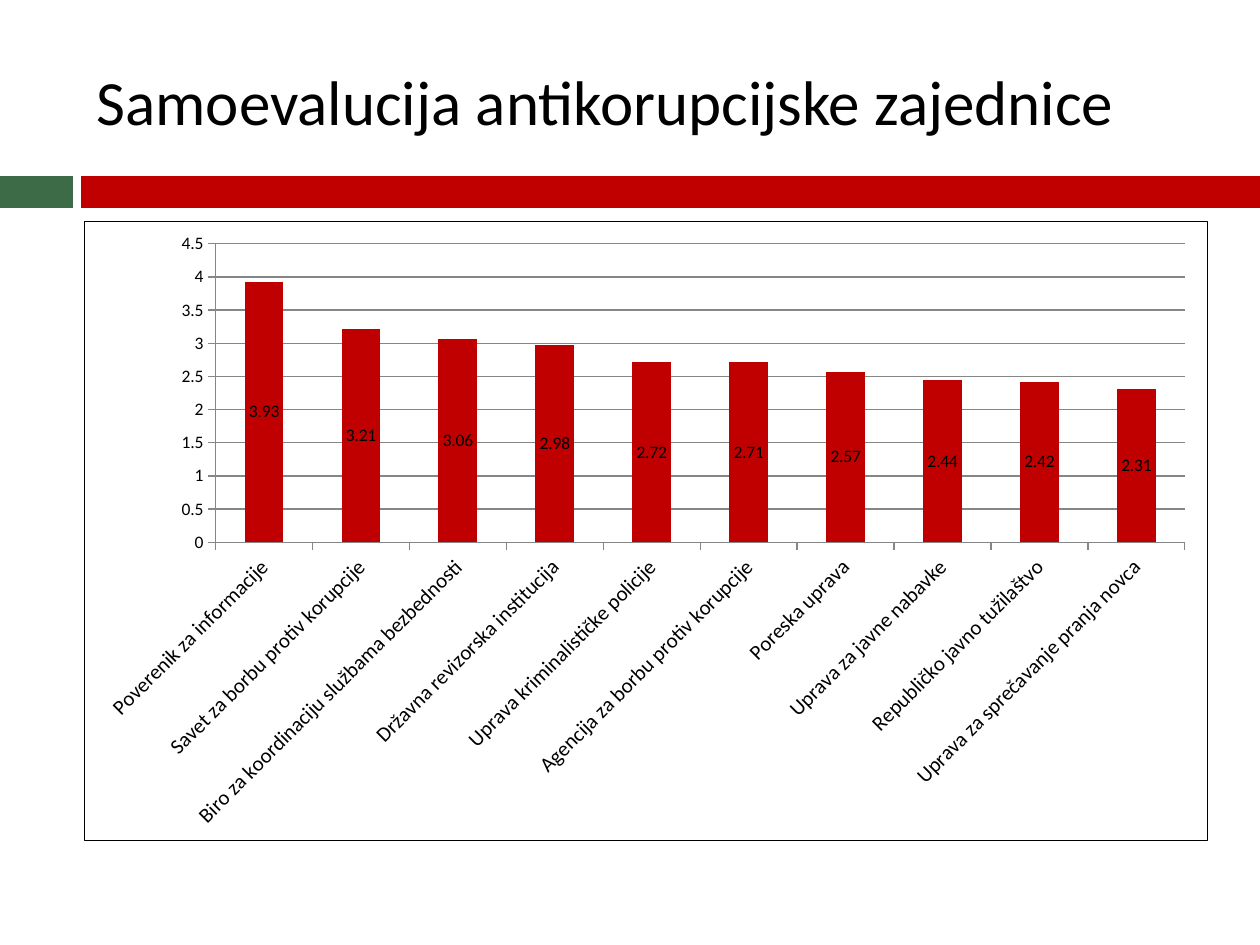
from pptx import Presentation
from pptx.chart.data import CategoryChartData
from pptx.dml.color import RGBColor
from pptx.enum.chart import XL_CHART_TYPE, XL_LABEL_POSITION, XL_TICK_MARK
from pptx.enum.shapes import MSO_SHAPE
from pptx.enum.text import MSO_ANCHOR, MSO_AUTO_SIZE, PP_ALIGN
from pptx.oxml import parse_xml
from pptx.oxml.ns import nsdecls, qn
from pptx.util import Emu, Pt

STACKED = XL_CHART_TYPE.COLUMN_STACKED
LABEL_CENTER = XL_LABEL_POSITION.CENTER
TICK_OUTSIDE, TICK_NONE = XL_TICK_MARK.OUTSIDE, XL_TICK_MARK.NONE
RECTANGLE = MSO_SHAPE.RECTANGLE
MIDDLE, LEFT, NO_AUTOFIT = MSO_ANCHOR.MIDDLE, PP_ALIGN.LEFT, MSO_AUTO_SIZE.NONE

PX_PER_INCH = 126
FONT = "Calibri"
COLORS = {"text": "000000", "red": "C00000", "green": "3D6B48", "grid": "868686"}

SCORES = {
    "Poverenik za informacije": 3.93,
    "Savet za borbu protiv korupcije": 3.21,
    "Biro za koordinaciju službama bezbednosti": 3.06,
    "Državna revizorska institucija": 2.98,
    "Uprava kriminalističke policije": 2.72,
    "Agencija za borbu protiv korupcije": 2.71,
    "Poreska uprava": 2.57,
    "Uprava za javne nabavke": 2.44,
    "Republičko javno tužilaštvo": 2.42,
    "Uprava za sprečavanje pranja novca": 2.31,
}


def px(length):
    return Emu(round(length * 914400 / PX_PER_INCH))


def color(name):
    return RGBColor.from_string(COLORS[name])


def style_font(font, size):
    font.name = FONT
    font.size = Pt(size)
    font.color.rgb = color("text")


def add_title(slide, left, top, width, height):
    title = slide.shapes.title
    title.left, title.top, title.width, title.height = map(px, (left, top, width, height))
    frame = title.text_frame
    frame.text = "Samoevalucija antikorupcijske zajednice"
    frame.auto_size = NO_AUTOFIT
    frame.vertical_anchor = MIDDLE
    paragraph = frame.paragraphs[0]
    paragraph.alignment = LEFT
    style_font(paragraph.runs[0].font, 36)


def add_band(slide, left, top, width, height):
    """A short green block, a gap, and a red bar that fills the rest."""
    block, gap = 73, 8
    bar_left = block + gap
    parts = ((0, block, "green"), (bar_left, width - bar_left, "red"))
    for offset, part_width, name in parts:
        shape = slide.shapes.add_shape(
            RECTANGLE, px(left + offset), px(top), px(part_width), px(height))
        shape.shadow.inherit = False
        shape.fill.solid()
        shape.fill.fore_color.rgb = color(name)
        shape.line.fill.background()


def add_chart_border(chart):
    border = parse_xml(
        f'<c:spPr {nsdecls("c", "a")}><a:noFill/><a:ln w="{Pt(0.75)}"><a:solidFill>'
        f'<a:srgbClr val="{COLORS["text"]}"/></a:solidFill></a:ln></c:spPr>')
    chart.element.find(qn("c:chart")).addnext(border)


def slant_category_names(chart):
    category_element = chart.element.find(".//" + qn("c:catAx"))
    body = category_element.find(qn("c:txPr")).find(qn("a:bodyPr"))
    body.set("rot", str(-45 * 60000))
    body.set("vert", "horz")


def add_score_chart(slide, left, top, width, height):
    data = CategoryChartData()
    data.categories = SCORES.keys()
    data.add_series("Series 1", SCORES.values())
    chart = slide.shapes.add_chart(
        STACKED, px(left), px(top), px(width), px(height), data).chart
    chart.has_title = False
    chart.has_legend = False
    style_font(chart.font, 10)
    add_chart_border(chart)

    # Columns and their values
    plot = chart.plots[0]
    plot.gap_width = 150
    plot.overlap = 100
    plot.vary_by_categories = False
    fill = plot.series[0].format.fill
    fill.solid()
    fill.fore_color.rgb = color("red")
    plot.has_data_labels = True
    labels = plot.data_labels
    labels.show_value = True
    labels.position = LABEL_CENTER
    style_font(labels.font, 10)

    # Axes
    value_axis, category_axis = chart.value_axis, chart.category_axis
    value_axis.minimum_scale = 0
    value_axis.maximum_scale = 4.5
    value_axis.major_unit = 0.5
    value_axis.has_major_gridlines = True
    for axis, size in ((value_axis, 10), (category_axis, 12)):
        axis.major_tick_mark = TICK_OUTSIDE
        axis.minor_tick_mark = TICK_NONE
        style_font(axis.tick_labels.font, size)
    for line in (value_axis.format.line, category_axis.format.line,
                 value_axis.major_gridlines.format.line):
        line.color.rgb = color("grid")
        line.width = Pt(0.75)
    slant_category_names(chart)


def main():
    presentation = Presentation()
    presentation.slide_width, presentation.slide_height = px(1260), px(945)
    slide = presentation.slides.add_slide(presentation.slide_layouts[5])
    add_band(slide, 0, 176, 1260, 32)
    add_title(slide, 84, 32, 1124, 136)
    add_score_chart(slide, 84, 221, 1124, 620)
    presentation.save("out.pptx")


if __name__ == "__main__":
    main()
